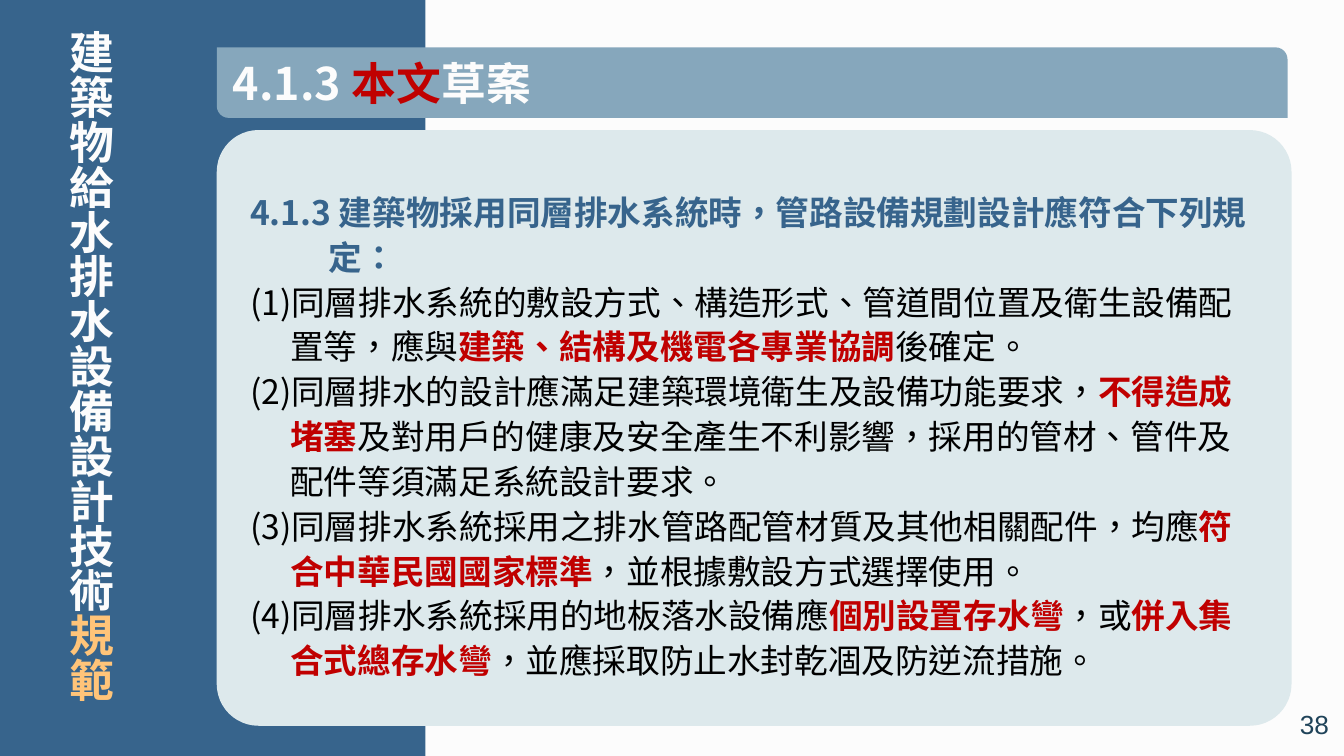
from lxml import etree
from pptx import Presentation
from pptx.dml.color import RGBColor
from pptx.enum.shapes import MSO_SHAPE
from pptx.enum.text import MSO_ANCHOR, MSO_AUTO_SIZE, PP_ALIGN
from pptx.oxml.ns import qn
from pptx.util import Inches, Pt

RECT = MSO_SHAPE.RECTANGLE
ROUND = MSO_SHAPE.ROUNDED_RECTANGLE
DIAG = MSO_SHAPE.ROUND_2_DIAG_RECTANGLE
TOP, MIDDLE = MSO_ANCHOR.TOP, MSO_ANCHOR.MIDDLE
FIXED = MSO_AUTO_SIZE.NONE
LEFT, CENTER, RIGHT = PP_ALIGN.LEFT, PP_ALIGN.CENTER, PP_ALIGN.RIGHT

WHITE = RGBColor(0xFC, 0xFC, 0xFC)
BLUE = RGBColor(0x37, 0x64, 0x8C)
STEEL = RGBColor(0x86, 0xA7, 0xBC)
PALE = RGBColor(0xDD, 0xE9, 0xEC)
NAVY = RGBColor(0x1F, 0x43, 0x59)
GOLD = RGBColor(0xFF, 0xC4, 0x79)
RED = RGBColor(0xC0, 0x00, 0x00)
BLACK = RGBColor(0x00, 0x00, 0x00)

CJK = "Noto Sans CJK SC"
HEAD = {"name": CJK, "size": Pt(32), "bold": True}
LEAD = {"name": CJK, "size": Pt(24), "bold": True}
BODY = {**LEAD, "bold": False}
PAGE = {"name": "Arial", "size": Pt(18.7), "bold": False}

RULES = [
    [("(1)同層排水系統的敷設方式、構造形式、管道間位置及衛生設備配置等，應與", False),
     ("建築、結構及機電各專業協調", True),
     ("後確定。", False)],
    [("(2)同層排水的設計應滿足建築環境衛生及設備功能要求，", False),
     ("不得造成堵塞", True),
     ("及對用戶的健康及安全產生不利影響，採用的管材、管件及配件等須滿足系統設計要求。", False)],
    [("(3)同層排水系統採用之排水管路配管材質及其他相關配件，均應", False),
     ("符合中華民國國家標準", True),
     ("，並根據敷設方式選擇使用。", False)],
    [("(4)同層排水系統採用的地板落水設備應", False),
     ("個別設置存水彎", True),
     ("，或", False),
     ("併入集合式總存水彎", True),
     ("，並應採取防止水封乾凅及防逆流措施。", False)],
]


def apply(target, values):
    for key, value in values.items():
        setattr(target, key, value)


class Page:
    def __init__(self, deck):
        self.slide = deck.slides.add_slide(deck.slide_layouts[1])
        fill = self.slide.background.fill
        fill.solid()
        fill.fore_color.rgb = WHITE

    def place(self, shape, box):
        apply(shape, dict(zip(("left", "top", "width", "height"), map(Inches, box))))

    def panel(self, kind, box, color, bends=()):
        shape = self.slide.shapes.add_shape(kind, *map(Inches, box))
        shape.shadow.inherit = False
        shape.fill.solid()
        shape.fill.fore_color.rgb = color
        shape.line.fill.background()
        for index, bend in enumerate(bends):
            shape.adjustments[index] = bend

    def holder(self, index, box, anchor):
        shape = self.slide.placeholders[index]
        self.place(shape, box)
        self.slide.shapes._spTree.append(shape._element)
        return self.frame(shape, anchor)

    def label(self, box, anchor):
        shape = self.slide.shapes.add_textbox(*map(Inches, box))
        return self.frame(shape, anchor)

    def frame(self, shape, anchor):
        frame = shape.text_frame
        apply(frame, {"word_wrap": True, "auto_size": FIXED, "vertical_anchor": anchor})
        return frame

    def text(self, para, runs, style, align=LEFT, space=1.0, indent=0):
        props = para._p.get_or_add_pPr()
        props.set("marL", str(Inches(indent)))
        props.set("indent", str(-Inches(indent)))
        etree.SubElement(props, qn("a:buNone"))
        apply(para, {"alignment": align, "line_spacing": space,
                     "space_before": Pt(0), "space_after": Pt(0)})
        for words, color, extra in runs:
            run = para.add_run()
            run.text = words
            apply(run.font, {**style, **extra})
            run.font.color.rgb = color
            mark = run._r.get_or_add_rPr()
            mark.set("lang", "zh-TW")
            etree.SubElement(mark, qn("a:ea")).set("typeface", style["name"])


def main():
    deck = Presentation()
    apply(deck, {"slide_width": Inches(13.33), "slide_height": Inches(7.5)})
    page = Page(deck)

    page.panel(RECT, (0, 0, 4.22, 7.5), BLUE)
    title = page.holder(0, (0.5, 0.2, 0.87, 7), MIDDLE)
    sides = ("margin_left", "margin_top", "margin_right", "margin_bottom")
    apply(title, dict.fromkeys(sides, Inches(0.1)))
    title._txBody.bodyPr.set("vert", "eaVert")
    page.text(title.paragraphs[0],
              [("建築物給水排水設備設計技術", WHITE, {}), ("規範", GOLD, {})],
              HEAD, CENTER, 1.15)

    number = page.label((10.28, 6.98, 3, 0.4), MIDDLE)
    page.text(number.paragraphs[0], [("38", NAVY, {})], PAGE, RIGHT)

    page.panel(ROUND, (2.15, 1.29, 10.66, 5.91), PALE, [0.07])
    body = page.holder(1, (2.38, 1.81, 10.09, 5), TOP)
    lead = "4.1.3 建築物採用同層排水系統時，管路設備規劃設計應符合下列規定："
    page.text(body.paragraphs[0], [(lead, BLUE, {})], LEAD, space=Pt(32), indent=0.78)
    for rule in RULES:
        runs = [(words, RED if key else BLACK, {"bold": key}) for words, key in rule]
        page.text(body.add_paragraph(), runs, BODY, space=Pt(32), indent=0.4)

    page.panel(DIAG, (2.15, 0.47, 10.62, 0.7), STEEL, [0, 0.17])
    banner = page.label((2.21, 0.5, 8.07, 0.64), TOP)
    page.text(banner.paragraphs[0],
              [("4.1.3 ", WHITE, {}), ("本文", RED, {}), ("草案", WHITE, {})], HEAD)

    deck.save("out.pptx")


if __name__ == "__main__":
    main()
